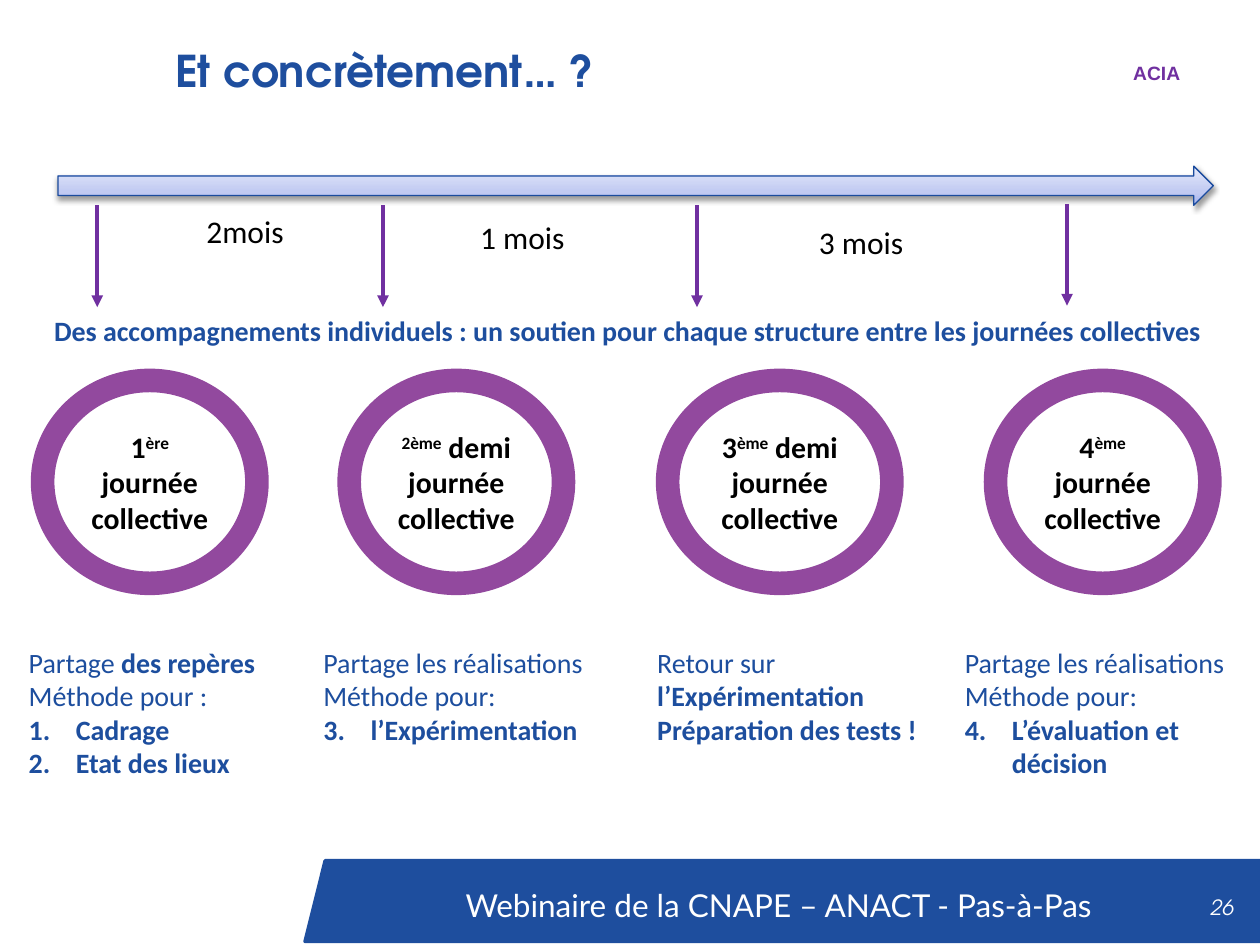
from lxml import etree
from pptx import Presentation
from pptx.dml.color import RGBColor
from pptx.enum.shapes import MSO_CONNECTOR, MSO_SHAPE
from pptx.enum.text import MSO_ANCHOR, PP_ALIGN
from pptx.oxml import parse_xml
from pptx.oxml.ns import nsdecls, qn
from pptx.util import Cm, Pt

LEFT, CENTER, RIGHT = PP_ALIGN.LEFT, PP_ALIGN.CENTER, PP_ALIGN.RIGHT
TOP, MIDDLE = MSO_ANCHOR.TOP, MSO_ANCHOR.MIDDLE

BLUE = RGBColor(0x1E, 0x4E, 0x9E)
NOTE_BLUE = RGBColor(0x1D, 0x4E, 0x9E)
ARROW_EDGE = RGBColor(0x1A, 0x4B, 0x9E)
PURPLE = RGBColor(0x70, 0x30, 0xA0)
RING = RGBColor(0x92, 0x49, 0x9E)
WHITE = RGBColor(0xFF, 0xFF, 0xFF)
BLACK = RGBColor(0, 0, 0)
ARROW_STOPS = [(0, "A5B3EE"), (35, "C1CAF2"), (100, "E6EAFB")]

TITLE = dict(name="TeX Gyre Adventor", size=25, color=BLUE, bold=True)
TAG = dict(name="Arial", size=11, color=PURPLE, bold=True)
FOOTER = dict(name="Lato", size=18, color=WHITE)
NUMBER = dict(name="TeX Gyre Adventor", size=12, color=WHITE, italic=True)
MONTH = dict(name="Calibri", size=18, color=BLACK)
STEP = dict(name="Calibri", size=17, color=BLACK, bold=True)
NOTE = dict(name="Calibri", size=16, color=NOTE_BLUE)
STRONG = dict(NOTE, bold=True)

# Each step: left and width of its ring, ordinal parts, rest of the label
STEPS = [
    (0.86, 4.32, "1", "ère", " journée collective"),
    (7.04, 4.32, "", "2ème", " demi journée collective"),
    (13.46, 4.52, "3", "ème", " demi journée collective"),
    (20.07, 4.32, "4", "ème", " journée collective"),
]
# Each note: left, width, paragraphs of (text, style) spans, numbered items, first number
REVIEW = [[("Partage les réalisations Méthode pour:", NOTE)]]
NOTES = [
    (0.33, 5.87, [[("Partage ", NOTE), ("des repères", STRONG)], [("Méthode pour :", NOTE)]],
     ["Cadrage", "Etat des lieux"], 1),
    (6.27, 5.87, REVIEW, ["l’Expérimentation"], 3),
    (13.0, 6.32, [[("Retour sur ", NOTE), ("l’Expérimentation", STRONG)],
                  [("Préparation des tests !", STRONG)]], [], 1),
    (19.2, 5.87, REVIEW, ["L’évaluation et décision"], 4),
]
TICKS = [(1.96, 4.14, 2.25), (7.72, 4.14, 2.25), (14.05, 4.14, 2.25), (21.51, 4.11, 2.25)]
MONTHS = [(2.97, 4.14, "2mois"), (8.56, 4.27, "1 mois"), (15.39, 4.37, "3 mois")]


def add_span(para, text, style):
    span = para.add_run()
    span.text = text
    for key, value in style.items():
        if key == "color":
            span.font.color.rgb = value
        else:
            setattr(span.font, key, Pt(value) if key == "size" else value)
    return span


def add_text(page, box, paras, align=LEFT, anchor=TOP):
    """Add a wrapped text box; each paragraph is a list of (text, style) spans."""
    frame = page.shapes.add_textbox(*map(Cm, box)).text_frame
    frame.word_wrap = True
    frame.vertical_anchor = anchor
    for index, spans in enumerate(paras):
        para = frame.add_paragraph() if index else frame.paragraphs[0]
        para.alignment = align
        for text, style in spans:
            add_span(para, text, style)
    return frame


def add_shape(page, kind, box, fill, edge, width):
    shape = page.shapes.add_shape(kind, *map(Cm, box))
    shape.shadow.inherit = False
    if fill is not None:
        shape.fill.solid()
        shape.fill.fore_color.rgb = fill
    shape.line.color.rgb = edge
    shape.line.width = Pt(width)
    return shape


def add_timeline(page, left, top, width, height):
    arrow = add_shape(page, MSO_SHAPE.RIGHT_ARROW, (left, top, width, height),
                      None, ARROW_EDGE, 0.75)
    props = arrow._element.spPr
    stops = "".join(f'<a:gs pos="{place * 1000}"><a:srgbClr val="{color}"/></a:gs>'
                    for place, color in ARROW_STOPS)
    props.find(qn("a:prstGeom")).addnext(parse_xml(
        f'<a:gradFill {nsdecls("a")} rotWithShape="1"><a:gsLst>{stops}</a:gsLst>'
        '<a:lin ang="16200000" scaled="0"/></a:gradFill>'))
    props.find(qn("a:effectLst")).append(parse_xml(
        f'<a:outerShdw {nsdecls("a")} blurRad="{Pt(3.1)}" dist="{Pt(1.6)}" dir="5400000" '
        'rotWithShape="0"><a:srgbClr val="000000"><a:alpha val="38000"/></a:srgbClr>'
        '</a:outerShdw>'))


def add_tick(page, x, top, length, width=2.25):
    tick = page.shapes.add_connector(MSO_CONNECTOR.STRAIGHT, Cm(x), Cm(top),
                                     Cm(x), Cm(top + length))
    tick.line.color.rgb = PURPLE
    tick.line.width = Pt(width)
    etree.SubElement(tick.line._get_or_add_ln(), qn("a:tailEnd"), type="triangle")
    etree.SubElement(tick._element.spPr, qn("a:effectLst"))


def add_step(page, box, lead, raised, rest):
    ring = add_shape(page, MSO_SHAPE.OVAL, box, WHITE, RING, 13.5)
    ring.text_frame.word_wrap = True
    ring.text_frame.vertical_anchor = MIDDLE
    para = ring.text_frame.paragraphs[0]
    para.alignment = CENTER
    if lead:
        add_span(para, lead, STEP)
    ordinal = add_span(para, raised, STEP)
    ordinal.font._element.set("baseline", "30000")
    add_span(para, rest, STEP)


def add_note(page, box, paras, items, start):
    frame = add_text(page, box, paras)
    for item in items:
        para = frame.add_paragraph()
        props = para._p.get_or_add_pPr()
        props.set("marL", str(Cm(0.95)))
        props.set("indent", str(-Cm(0.95)))
        etree.SubElement(props, qn("a:buAutoNum"), type="arabicPeriod", startAt=str(start))
        add_span(para, item, STRONG)


def add_header(page, left, top):
    add_text(page, (left, top, 20.4, 2.79), [[("Et concrètement… ?", TITLE)]])
    add_text(page, (left + 19.28, top + 0.36, 1.52, 0.74), [[("ACIA", TAG)]], CENTER)


def add_footer(page, left, top):
    add_shape(page, MSO_SHAPE.PARALLELOGRAM, (left, top, 19.66, 1.63), BLUE, BLUE, 2)
    add_text(page, (left + 0.1, top + 0.38, 18.9, 1.02),
             [[("Webinaire de la CNAPE – ANACT - Pas-à-Pas", FOOTER)]], CENTER)
    add_text(page, (left + 13.05, top + 0.43, 5.92, 1.02), [[("26", NUMBER)]], RIGHT, MIDDLE)


def main():
    deck = Presentation()
    deck.slide_width, deck.slide_height = Cm(25.4), Cm(19.05)
    page = deck.slides.add_slide(deck.slide_layouts[6])

    add_header(page, 3.28, 0.76)
    add_footer(page, 6.15, 17.35)
    for left, width, *label in STEPS:
        add_step(page, (left, 7.67, width, 4.09), *label)
    for left, width, paras, items, start in NOTES:
        height = 2.31 + 0.68 * (len(paras) + len(items) > 3)
        add_note(page, (left, 12.88, width, height), paras, items, start)
    add_timeline(page, 1.17, 3.35, 23.29, 0.79)
    for x, top, width in TICKS:
        add_tick(page, x, top, 2.05, width)
    for left, top, text in MONTHS:
        add_text(page, (left, top, 3.94, 1.02), [[(text, MONTH)]], CENTER)
    add_text(page, (0.84, 6.2, 24.21, 0.94), [[(
        "Des accompagnements individuels : un soutien pour chaque structure "
        "entre les journées collectives", STRONG)]])
    deck.save("out.pptx")


if __name__ == "__main__":
    main()
